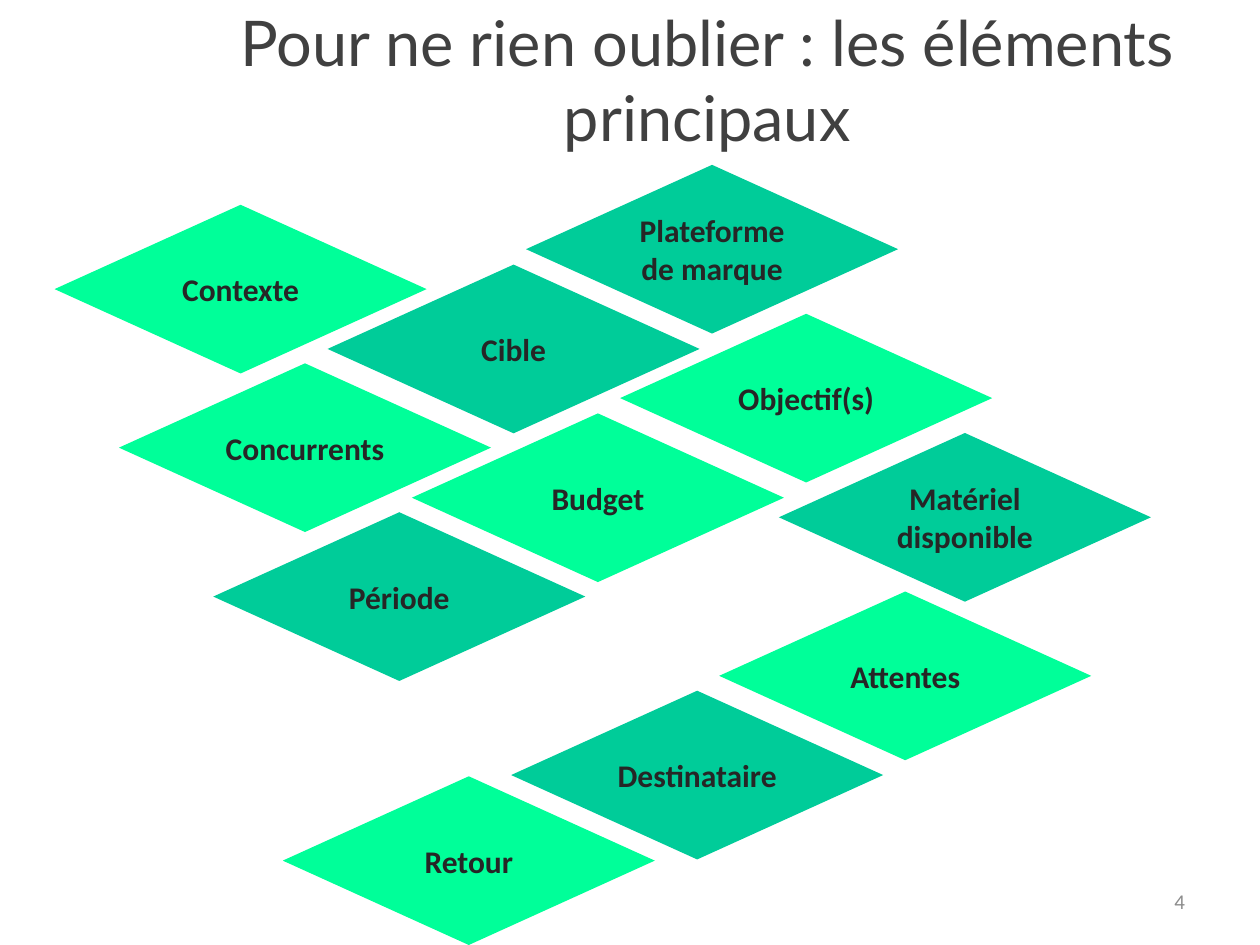
from dataclasses import dataclass

from pptx import Presentation
from pptx.dml.color import RGBColor
from pptx.enum.shapes import MSO_SHAPE as Shape
from pptx.enum.text import MSO_ANCHOR as Anchor, MSO_AUTO_SIZE as AutoSize, PP_ALIGN as Align
from pptx.slide import Slide
from pptx.text.text import TextFrame
from pptx.util import Pt

COLORS = {
    "light": "00FF99",
    "dark": "00CC99",
    "title": "404040",
    "label": "262626",
    "number": "8C8C8C",
}
FORMATS = {
    "title": {"name": "Lato", "size": Pt(36), "bold": False},
    "label": {"name": "Calibri", "size": Pt(18), "bold": True},
    "number": {"name": "Calibri", "size": Pt(12), "bold": False},
}
DIAMOND_W, DIAMOND_H = 212.6, 96.4


@dataclass
class Diamond:
    text: str
    left: float
    top: float
    color: str


DIAMONDS = [
    Diamond("Budget", 235.4, 236.2, "light"),
    Diamond("Cible", 187.2, 151.2, "dark"),
    Diamond("Période", 121.9, 292.7, "dark"),
    Diamond("Destinataire", 292.1, 394.7, "dark"),
    Diamond("Concurrents", 68, 207.6, "light"),
    Diamond("Retour", 161.6, 443.6, "light"),
    Diamond("Matériel disponible", 445.1, 247.4, "dark"),
    Diamond("Objectif(s)", 354.4, 179.3, "light"),
    Diamond("Contexte", 31.2, 117, "light"),
    Diamond("Attentes", 411, 338, "light"),
    Diamond("Plateforme de marque", 300.6, 94.2, "dark"),
]


def write(tf: TextFrame, text: str, style: str, align: Align) -> None:
    tf.word_wrap = True
    tf.auto_size = AutoSize.NONE
    tf.vertical_anchor = Anchor.MIDDLE
    p = tf.paragraphs[0]
    p.alignment = align
    r = p.add_run()
    r.text = text
    for key, value in FORMATS[style].items():
        setattr(r.font, key, value)
    r.font.color.rgb = RGBColor.from_string(COLORS[style])


def draw_diamond(s: Slide, d: Diamond) -> None:
    sp = s.shapes.add_shape(Shape.FLOWCHART_DECISION, Pt(d.left), Pt(d.top),
                            Pt(DIAMOND_W), Pt(DIAMOND_H))
    sp.shadow.inherit = False
    sp.fill.solid()
    sp.fill.fore_color.rgb = RGBColor.from_string(COLORS[d.color])
    sp.line.fill.background()
    write(sp.text_frame, d.text, "label", Align.CENTER)


def main() -> None:
    prs = Presentation()
    prs.slide_width, prs.slide_height = Pt(720), Pt(540)
    s = prs.slides.add_slide(prs.slide_layouts[5])

    title = s.shapes.title
    title.left, title.top, title.width, title.height = Pt(105), Pt(5.8), Pt(598.3), Pt(78.5)
    write(title.text_frame, "Pour ne rien oublier : les éléments principaux", "title", Align.CENTER)

    for d in DIAMONDS:
        draw_diamond(s, d)

    number = s.shapes.add_textbox(Pt(516.2), Pt(500.4), Pt(168), Pt(28.8))
    write(number.text_frame, "4", "number", Align.RIGHT)

    prs.save("out.pptx")


if __name__ == "__main__":
    main()
